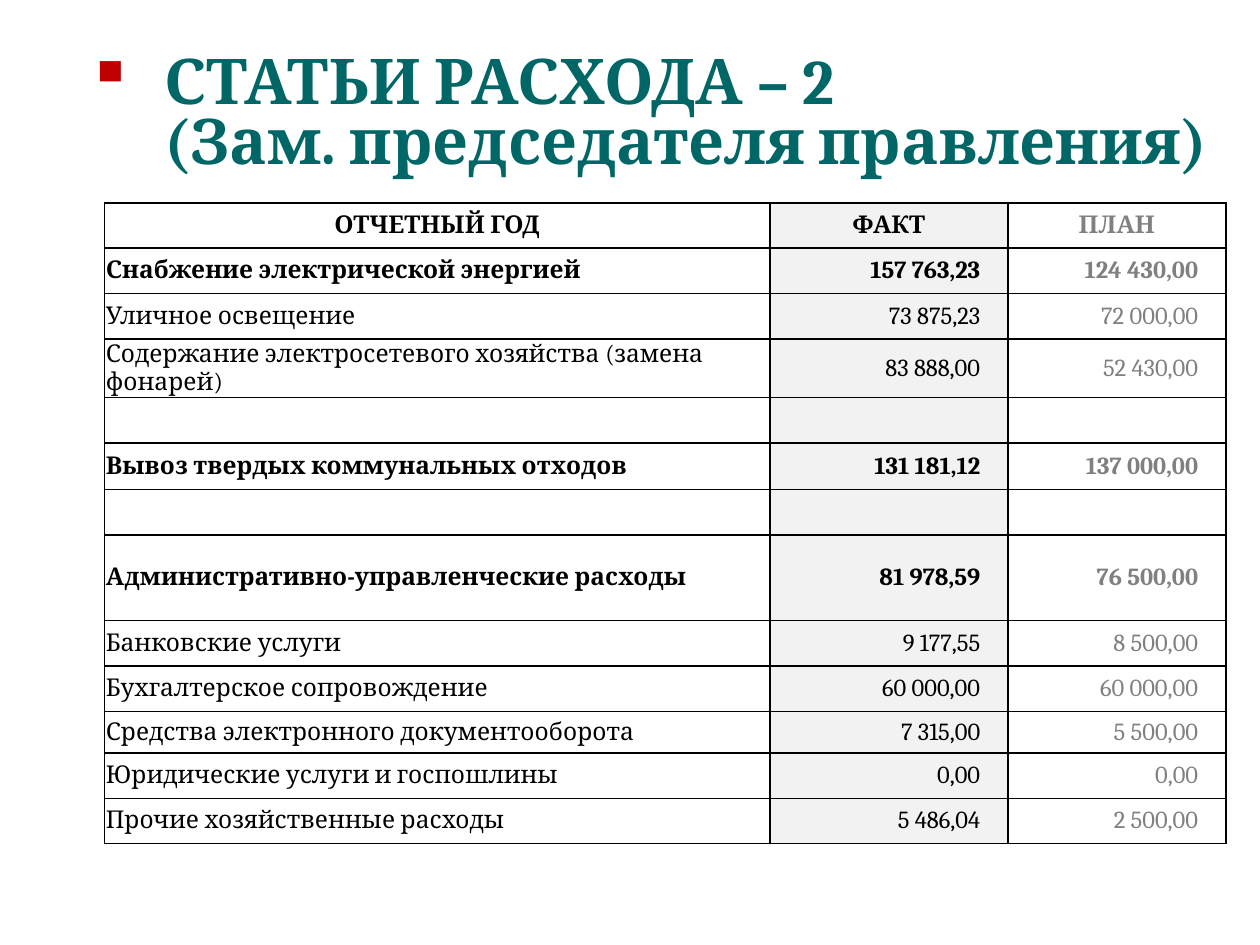
from pptx import Presentation
from pptx.dml.color import RGBColor
from pptx.enum import text
from pptx.oxml import parse_xml
from pptx.oxml.ns import nsdecls
from pptx.util import Inches, Pt

FONT = "Cambria"
TEAL = RGBColor(0x00, 0x66, 0x66)
RED = RGBColor(0xC0, 0x00, 0x00)
BLACK = RGBColor(0x00, 0x00, 0x00)
GRAY = RGBColor(0x80, 0x80, 0x80)
LIGHT = RGBColor(0xF2, 0xF2, 0xF2)
WHITE = RGBColor(0xFF, 0xFF, 0xFF)

# (item, actual, planned, row height, bold)
EXPENSES = [
    ("ОТЧЕТНЫЙ ГОД", "ФАКТ", "ПЛАН", 0.36, True),
    ("Снабжение электрической энергией", "157 763,23", "124 430,00", 0.36, True),
    ("Уличное освещение", "73 875,23", "72 000,00", 0.36, False),
    ("Содержание электросетевого хозяйства (замена фонарей)",
     "83 888,00", "52 430,00", 0.2, False),
    ("", "", "", 0.36, False),
    ("Вывоз твердых коммунальных отходов", "131 181,12", "137 000,00", 0.37, True),
    ("", "", "", 0.36, False),
    ("Административно-управленческие расходы", "81 978,59", "76 500,00", 0.68, True),
    ("Банковские услуги", "9 177,55", "8 500,00", 0.36, False),
    ("Бухгалтерское сопровождение", "60 000,00", "60 000,00", 0.36, False),
    ("Средства электронного документооборота", "7 315,00", "5 500,00", 0.33, False),
    ("Юридические услуги и госпошлины", "0,00", "0,00", 0.36, False),
    ("Прочие хозяйственные расходы", "5 486,04", "2 500,00", 0.36, False),
]
COLUMN_WIDTHS = [5.28, 1.89, 1.73]
COLUMN_COLORS = [BLACK, BLACK, GRAY]
COLUMN_FILLS = [WHITE, LIGHT, WHITE]


def add_run(paragraph, words, size, color, bold):
    run = paragraph.add_run()
    run.text = words
    run.font.name = FONT
    run.font.size = Pt(size)
    run.font.bold = bold
    run.font.color.rgb = color


def add_borders(cell):
    properties = cell._tc.get_or_add_tcPr()
    for side in ("lnL", "lnR", "lnT", "lnB"):
        properties.append(parse_xml(
            f'<a:{side} {nsdecls("a")} w="{Pt(1)}"><a:solidFill>'
            f'<a:srgbClr val="{BLACK}"/></a:solidFill></a:{side}>'))


prs = Presentation()
prs.slide_width = Inches(10)
prs.slide_height = Inches(7.5)
slide = prs.slides.add_slide(prs.slide_layouts[6])

# Title with a hanging bullet
title = slide.shapes.add_textbox(
    Inches(0.59), Inches(0.3), Inches(9.41), Inches(1.25)).text_frame
title.word_wrap = True
title.vertical_anchor = text.MSO_ANCHOR.MIDDLE
heading = title.paragraphs[0]
heading.line_spacing = 0.8
add_run(heading, "СТАТЬИ РАСХОДА – 2", 36, TEAL, True)
heading.add_line_break()
add_run(heading, "(Зам. председателя правления)", 36, TEAL, True)
bullet = heading._p.get_or_add_pPr()
bullet.set("marL", str(Inches(0.62)))
bullet.set("indent", str(-Inches(0.62)))
bullet.append(parse_xml(
    f'<a:buClr {nsdecls("a")}><a:srgbClr val="{RED}"/></a:buClr>'))
bullet.append(parse_xml(f'<a:buChar {nsdecls("a")} char="▪"/>'))

# Expense table
table = slide.shapes.add_table(
    len(EXPENSES), len(COLUMN_WIDTHS), Inches(0.83), Inches(1.61),
    Inches(sum(COLUMN_WIDTHS)), Inches(sum(row[3] for row in EXPENSES))).table
table.first_row = False
table.horz_banding = False
for column, width in zip(table.columns, COLUMN_WIDTHS):
    column.width = Inches(width)

for r, (*entries, height, bold) in enumerate(EXPENSES):
    table.rows[r].height = Inches(height)
    for c, entry in enumerate(entries):
        cell = table.cell(r, c)
        add_borders(cell)
        cell.fill.solid()
        cell.fill.fore_color.rgb = COLUMN_FILLS[c]
        cell.vertical_anchor = text.MSO_ANCHOR.MIDDLE
        cell.margin_left = cell.margin_right = Inches(0.01)
        cell.margin_top = cell.margin_bottom = 0
        paragraph = cell.text_frame.paragraphs[0]
        if r == 0:
            paragraph.alignment = text.PP_ALIGN.CENTER
        elif c > 0:
            paragraph.alignment = text.PP_ALIGN.RIGHT
            cell.margin_right = Inches(0.22)
        if entry:
            add_run(paragraph, entry, 14, COLUMN_COLORS[c], bold)

prs.save("out.pptx")
